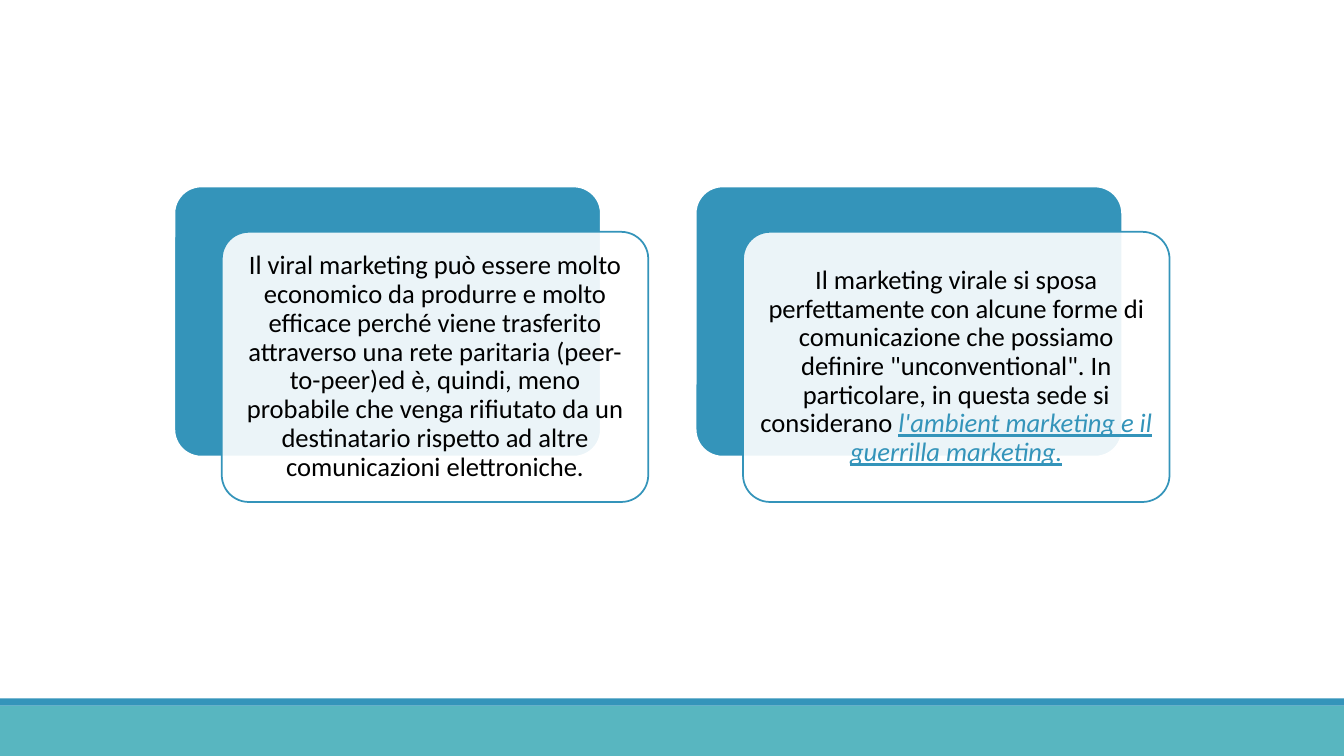
from lxml import etree
from pptx import Presentation
from pptx.dml.color import RGBColor
from pptx.enum.shapes import MSO_SHAPE
from pptx.enum.text import MSO_ANCHOR, PP_ALIGN
from pptx.oxml.ns import qn
from pptx.util import Inches, Pt

COLORS = {"blue": "3494BA", "teal": "58B6C0", "white": "FFFFFF", "black": "000000"}

CARDS = [
    ("Il viral marketing può essere molto economico da produrre e molto efficace "
     "perché viene trasferito attraverso una rete paritaria (peer-to-peer)ed è, "
     "quindi, meno probabile che venga rifiutato da un destinatario rispetto ad "
     "altre comunicazioni elettroniche.", ""),
    ("Il marketing virale si sposa perfettamente con alcune forme di comunicazione "
     "che possiamo definire \"unconventional\". In particolare, in questa sede si "
     "considerano ", "l'ambient marketing e il guerrilla marketing."),
]


def rgb(name):
    return RGBColor.from_string(COLORS[name])


def add_box(s, kind, left, top, width, height, fill, line=None):
    sp = s.shapes.add_shape(kind, Inches(left), Inches(top), Inches(width), Inches(height))
    sp.shadow.inherit = False
    sp.fill.solid()
    sp.fill.fore_color.rgb = rgb(fill)
    if line:
        sp.adjustments[0] = 0.1
        sp.line.color.rgb = rgb(line)
        sp.line.width = Pt(1.25)
    else:
        sp.line.fill.background()
    return sp


prs = Presentation()
prs.slide_width = Inches(13.33)
prs.slide_height = Inches(7.5)
s = prs.slides.add_slide(prs.slide_layouts[6])

add_box(s, MSO_SHAPE.RECTANGLE, 0, 7, 13.33, 0.5, "teal")
add_box(s, MSO_SHAPE.RECTANGLE, 0, 6.93, 13.33, 0.07, "blue")

card_w, card_h = 4.23, 2.68
for i, (body, emphasis) in enumerate(CARDS):
    left, top = 1.73 + i * 5.17, 1.85
    add_box(s, MSO_SHAPE.ROUNDED_RECTANGLE, left, top, card_w, card_h, "blue", "white")
    card = add_box(s, MSO_SHAPE.ROUNDED_RECTANGLE, left + 0.47, top + 0.45,
                   card_w, card_h, "white", "blue")
    fill_color = card.fill._xPr.find(qn("a:solidFill"))[0]
    etree.SubElement(fill_color, qn("a:alpha"), val="90000")

    tf = card.text_frame
    tf.word_wrap = True
    tf.vertical_anchor = MSO_ANCHOR.MIDDLE
    tf.margin_left = tf.margin_right = tf.margin_top = tf.margin_bottom = Inches(0.08)
    p = tf.paragraphs[0]
    p.text = body
    p.alignment = PP_ALIGN.CENTER
    p.line_spacing = 0.9
    if emphasis:
        r = p.add_run()
        r.text = emphasis
        r.font.italic = True
        r.font.underline = True
    for r, color in zip(p.runs, ("black", "blue")):
        r.font.name = "Calibri"
        r.font.size = Pt(19)
        r.font.color.rgb = rgb(color)

prs.save("out.pptx")
